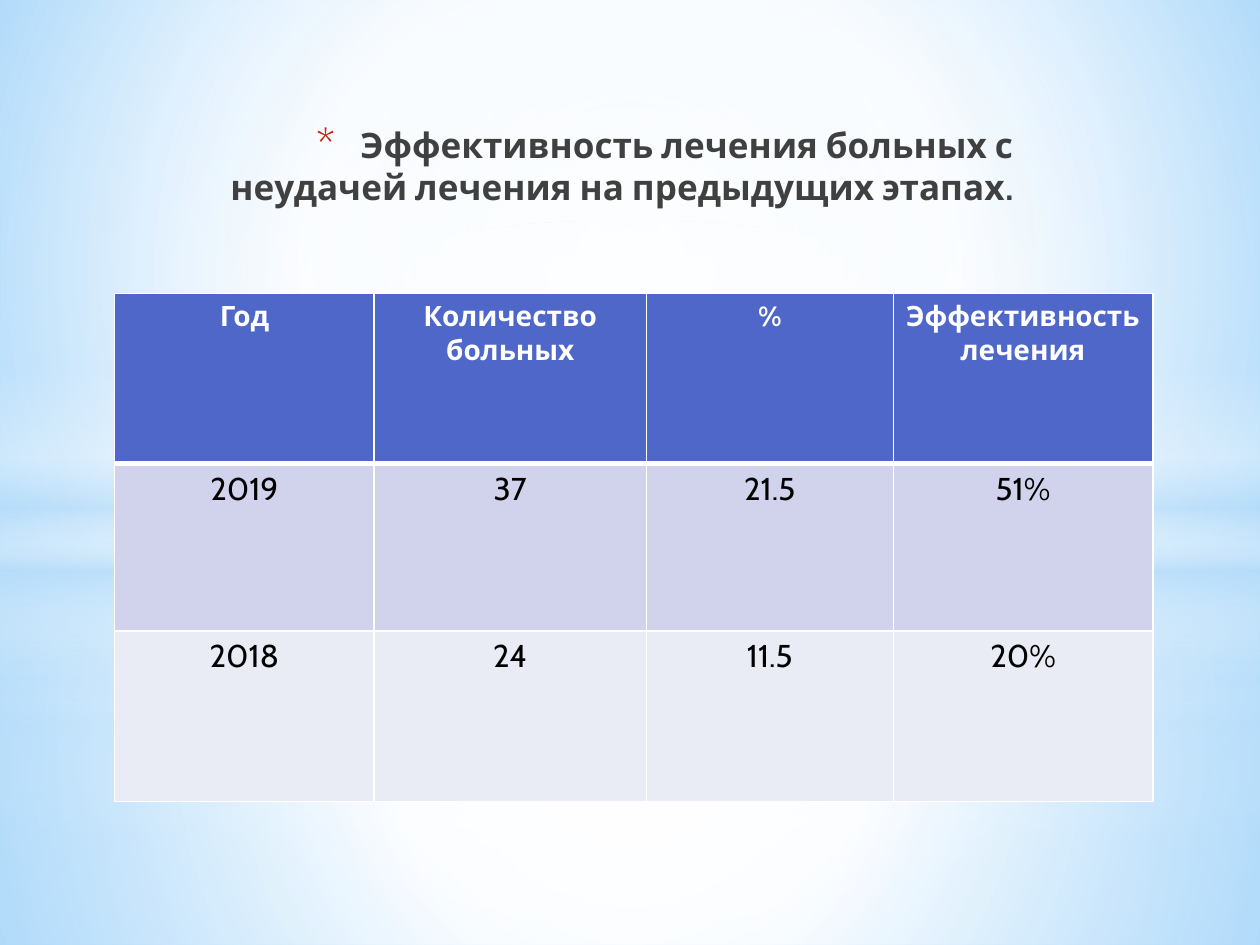
from lxml import etree
from pptx import Presentation
from pptx.dml.color import RGBColor
from pptx.enum import shapes, text
from pptx.oxml import ns
from pptx.util import Inches, Pt

WHITE = RGBColor(0xFF, 0xFF, 0xFF)
BLACK = RGBColor(0, 0, 0)
DARK_GRAY = RGBColor(0x40, 0x40, 0x40)
BLUE = RGBColor(0x4E, 0x67, 0xC8)
LAVENDER = RGBColor(0xD0, 0xD3, 0xEB)
PALE_LAVENDER = RGBColor(0xE9, 0xEB, 0xF5)
SKY = RGBColor(0xB4, 0xDC, 0xFA)
BACKGROUND_START = RGBColor(0x9E, 0xD5, 0xFF)
BACKGROUND_END = RGBColor(0x5B, 0xB9, 0xFF)
RED = RGBColor(0xC3, 0x26, 0x0C)
FONT = "Cabin"

TITLE = "Эффективность лечения больных с неудачей лечения на предыдущих этапах."
ROWS = [
    ("Год", "Количество больных", "%", "Эффективность лечения"),
    ("2019", "37", "21.5", "51%"),
    ("2018", "24", "11.5", "20%"),
]
ROW_FILLS = [BLUE, LAVENDER, PALE_LAVENDER]
COLUMN_WIDTHS = [2.06, 2.16, 1.96, 2.06]
ROW_HEIGHTS = [1.35, 1.33, 1.35]

# Gradient stops: position %, colour, opacity %
BACKGROUND = [(0, BACKGROUND_START, 100), (60, WHITE, 100), (100, BACKGROUND_END, 100)]
BAND = [(0, WHITE, 0), (29, WHITE, 30), (45, SKY, 40),
        (55, WHITE, 26), (65, SKY, 60), (100, WHITE, 0)]
CENTER = (50, 50, 50, 50)


def haze(start, middle_position, middle, end):
    return [(0, WHITE, start), (middle_position, WHITE, middle), (100, SKY, end)]


def glow(fade):
    return [(0, WHITE, 100), (fade, WHITE, 0)]


RECTANGLE = shapes.MSO_SHAPE.RECTANGLE
OVAL = shapes.MSO_SHAPE.OVAL
# Light layers, back to front: shape, top, height, stops, focus (None is linear)
LAYERS = [
    (RECTANGLE, 5.58, 1.92, haze(91, 37, 76, 79), CENTER),
    (RECTANGLE, 0, 5.58, haze(89, 48, 62, 79), CENTER),
    (RECTANGLE, 4.12, 2.5, BAND, None),
    (OVAL, 1.75, 5.58, glow(56), CENTER),
    (RECTANGLE, 4.23, 3.27, haze(92, 37, 77, 80), CENTER),
    (RECTANGLE, 0, 4.23, haze(90, 48, 63, 80), CENTER),
    (RECTANGLE, 2.9, 2.5, BAND, None),
    (OVAL, 1.75, 5.58, glow(54), CENTER),
]


def add_child(parent, tag, **attributes):
    child = etree.SubElement(parent, ns.qn(tag))
    for name, value in attributes.items():
        child.set(name, str(value))
    return child


def set_gradient(fill, owner, stops, focus=None):
    fill.gradient()
    gradient = owner.find(".//" + ns.qn("a:gradFill"))
    for child in list(gradient):
        gradient.remove(child)
    stop_list = add_child(gradient, "a:gsLst")
    for position, color, opacity in stops:
        stop = add_child(stop_list, "a:gs", pos=position * 1000)
        color_node = add_child(stop, "a:srgbClr", val=color)
        if opacity < 100:
            add_child(color_node, "a:alpha", val=opacity * 1000)
    if focus:
        shade = add_child(gradient, "a:path", path="circle")
        sides = {side: value * 1000 for side, value in zip("ltrb", focus)}
        add_child(shade, "a:fillToRect", **sides)
    else:
        add_child(gradient, "a:lin", ang=90 * 60000, scaled=0)


def write_text(frame, content, size, color, bold=False, align=text.PP_ALIGN.CENTER):
    paragraph = frame.paragraphs[0]
    paragraph.alignment = align
    run = paragraph.add_run()
    run.text = content
    run.font.name = FONT
    run.font.size = Pt(size)
    run.font.bold = bold
    run.font.color.rgb = color
    return paragraph


def set_borders(cell, bottom_width):
    properties = cell._tc.get_or_add_tcPr()
    widths = {"a:lnL": 1, "a:lnR": 1, "a:lnT": 1, "a:lnB": bottom_width}
    for tag, width in widths.items():
        line = add_child(properties, tag, w=Pt(width))
        add_child(add_child(line, "a:solidFill"), "a:srgbClr", val=WHITE)


presentation = Presentation()
presentation.slide_width = Inches(10)
presentation.slide_height = Inches(7.5)
slide = presentation.slides.add_slide(presentation.slide_layouts[6])

# Background and light layers
set_gradient(slide.background.fill, slide.element, BACKGROUND, (20, 10, 20, 60))
for kind, top, height, stops, focus in LAYERS:
    layer = slide.shapes.add_shape(kind, 0, Inches(top), Inches(10), Inches(height))
    layer.shadow.inherit = False
    layer.line.fill.background()
    set_gradient(layer.fill, layer.element.spPr, stops, focus)

# Title with a red asterisk bullet
title = slide.shapes.add_textbox(Inches(1.22), Inches(0.36), Inches(6.92), Inches(1.34))
title.text_frame.word_wrap = True
title.text_frame.vertical_anchor = text.MSO_ANCHOR.BOTTOM
paragraph = write_text(title.text_frame, TITLE, 20, DARK_GRAY, bold=True,
                       align=text.PP_ALIGN.RIGHT)
bullet = paragraph._p.get_or_add_pPr()
bullet.set("marL", str(Inches(0.35)))
bullet.set("indent", str(-Inches(0.35)))
add_child(add_child(bullet, "a:buClr"), "a:srgbClr", val=RED)
add_child(bullet, "a:buSzPct", val=128000)
add_child(bullet, "a:buFont", typeface=FONT)
add_child(bullet, "a:buChar", char="*")

# Results table
table = slide.shapes.add_table(
    len(ROWS), len(COLUMN_WIDTHS), Inches(0.91), Inches(2.33),
    Inches(sum(COLUMN_WIDTHS)), Inches(sum(ROW_HEIGHTS))).table
for column, width in zip(table.columns, COLUMN_WIDTHS):
    column.width = Inches(width)
for row_index, (row, height) in enumerate(zip(table.rows, ROW_HEIGHTS)):
    row.height = Inches(height)
    header = row_index == 0
    for cell, content in zip(row.cells, ROWS[row_index]):
        set_borders(cell, 3 if header else 1)
        cell.fill.solid()
        cell.fill.fore_color.rgb = ROW_FILLS[row_index]
        write_text(cell.text_frame, content, 16 if header else 18,
                   WHITE if header else BLACK, bold=header)

presentation.save("out.pptx")
